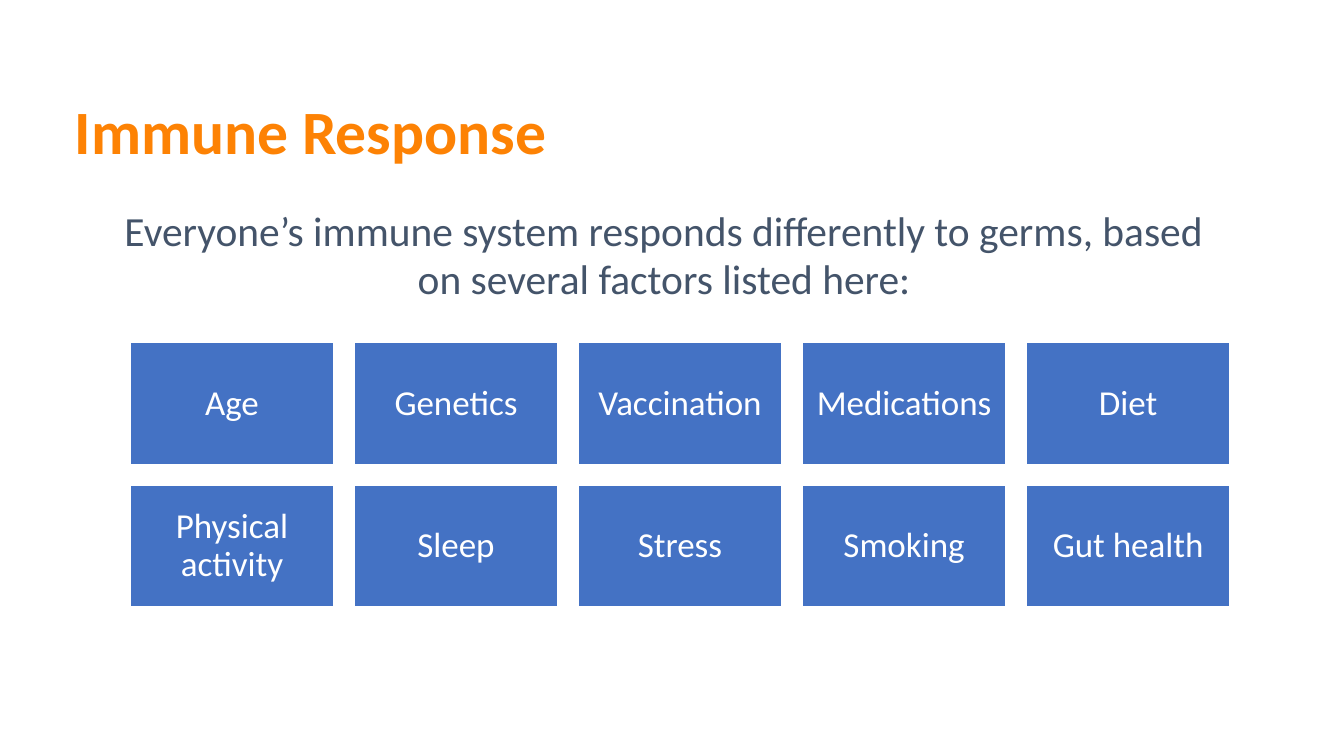
from pptx import Presentation
from pptx.dml.color import RGBColor
from pptx.enum.shapes import MSO_SHAPE
from pptx.enum.text import MSO_ANCHOR, MSO_AUTO_SIZE, PP_ALIGN
from pptx.util import Pt

PX = 9144
FONT = "Calibri"
COLORS = {"title": "FD8204", "intro": "44546A", "tile": "4472C4", "white": "FFFFFF"}
RECTANGLE = MSO_SHAPE.RECTANGLE
TOP, MIDDLE = MSO_ANCHOR.TOP, MSO_ANCHOR.MIDDLE
LEFT, CENTER = PP_ALIGN.LEFT, PP_ALIGN.CENTER
NO_AUTOFIT = MSO_AUTO_SIZE.NONE

TITLE = "Immune Response"
INTRO = ("Everyone’s immune system responds differently to germs, "
         "based on several factors listed here:")
FACTORS = [
    ["Age", "Genetics", "Vaccination", "Medications", "Diet"],
    ["Physical activity", "Sleep", "Stress", "Smoking", "Gut health"],
]


def px(*lengths):
    return [round(length * PX) for length in lengths]


def write(sp, text, size, color, align, anchor, spacing, inset, bold=False):
    tf = sp.text_frame
    tf.word_wrap = True
    tf.auto_size = NO_AUTOFIT
    tf.vertical_anchor = anchor
    tf.margin_left = tf.margin_right = inset * PX
    tf.margin_top = tf.margin_bottom = 5 * PX
    p = tf.paragraphs[0]
    p.alignment = align
    p.line_spacing = spacing
    r = p.add_run()
    r.text = text
    r.font.name = FONT
    r.font.size = Pt(size)
    r.font.bold = bold
    r.font.color.rgb = RGBColor.from_string(COLORS[color])


def add_title(s, box):
    sp = s.shapes.title
    sp.left, sp.top, sp.width, sp.height = px(*box)
    write(sp, TITLE, 44, "title", LEFT, MIDDLE, 0.9, 10, bold=True)


def add_intro(s, box):
    sp = s.shapes.add_textbox(*px(*box))
    write(sp, INTRO, 29.6, "intro", CENTER, TOP, 0.97, 5)


def add_factors(s, box, gap=20):
    left, top, width, height = box
    rows, cols = len(FACTORS), len(FACTORS[0])
    tile_w = (width - gap * (cols - 1)) / cols
    tile_h = (height - gap * (rows - 1)) / rows
    for row, factors in enumerate(FACTORS):
        for col, factor in enumerate(factors):
            x = left + col * (tile_w + gap)
            y = top + row * (tile_h + gap)
            sp = s.shapes.add_shape(RECTANGLE, *px(x, y, tile_w, tile_h))
            sp.shadow.inherit = False
            sp.fill.solid()
            sp.fill.fore_color.rgb = RGBColor.from_string(COLORS["tile"])
            sp.line.color.rgb = RGBColor.from_string(COLORS["white"])
            sp.line.width = Pt(1)
            write(sp, factor, 25, "white", CENTER, MIDDLE, 0.9, 10)


def main():
    prs = Presentation()
    prs.slide_width, prs.slide_height = px(1333, 750)
    s = prs.slides.add_slide(prs.slide_layouts[5])
    add_title(s, (64, 78, 1206, 111))
    add_intro(s, (113, 201, 1092, 120))
    add_factors(s, (129, 340, 1091, 262))
    prs.save("out.pptx")


if __name__ == "__main__":
    main()
